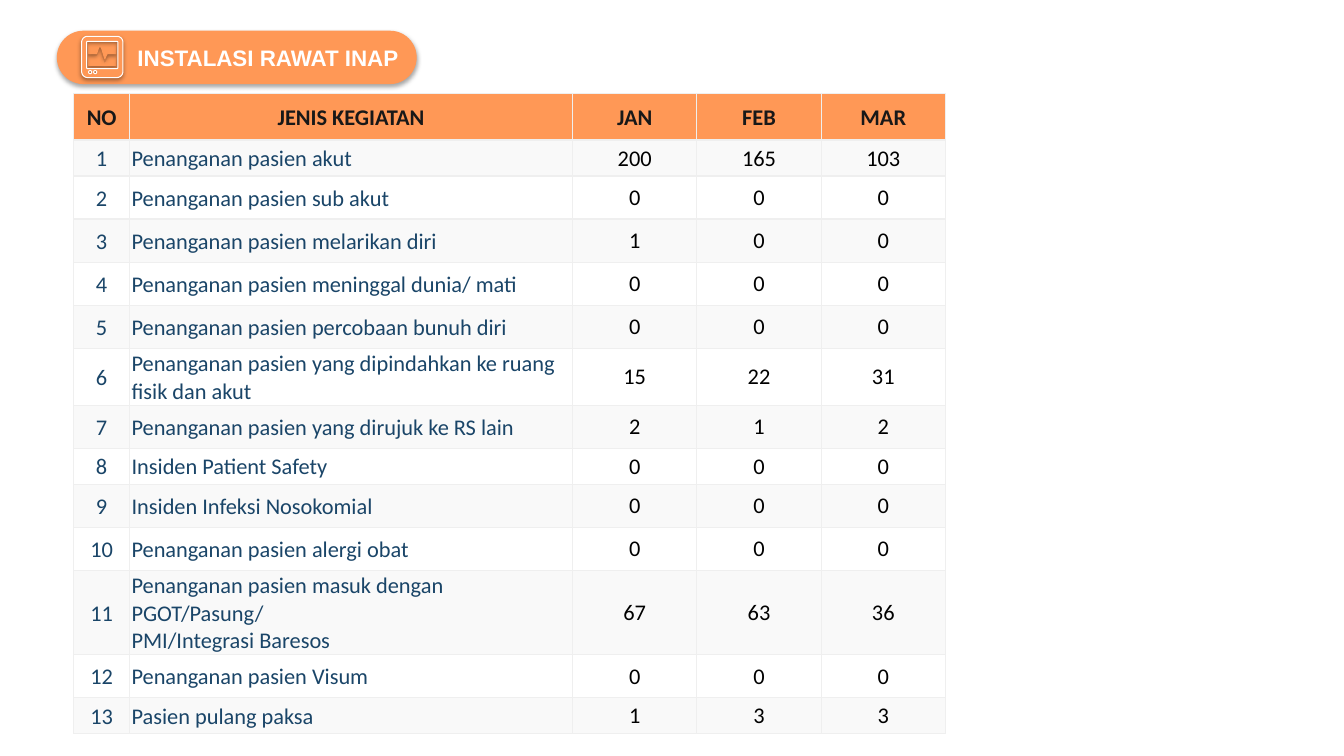
from copy import deepcopy
from dataclasses import dataclass
from math import cos, radians, sin

from lxml.etree import SubElement
from pptx import Presentation
from pptx.dml.color import RGBColor
from pptx.enum.shapes import MSO_SHAPE
from pptx.enum.text import MSO_ANCHOR, PP_ALIGN
from pptx.oxml.ns import qn
from pptx.util import Pt


@dataclass(frozen=True)
class Theme:
    orange: str = "FF9856"
    white: str = "FFFFFF"
    stripe: str = "F9F9F9"
    grid: str = "EFEFEF"
    heading: str = "181818"
    navy: str = "1A4568"
    black: str = "000000"
    text_size: float = 16
    table_font: str = "Calibri"
    title_font: str = "Arial"


@dataclass(frozen=True)
class Activity:
    name: str
    counts: tuple[int, int, int]
    height: float = 30.8


@dataclass(frozen=True)
class Box:
    """A rounded box in points."""
    left: float
    top: float
    width: float
    height: float
    radius: float


THEME = Theme()
SHORT_ROW = 25.7
HEADER_HEIGHT = 33
HEADINGS = ("NO", "JENIS KEGIATAN", "JAN", "FEB", "MAR")
COLUMN_WIDTHS = (40, 316.4, 88.8, 88.8, 88.8)
ACTIVITIES = (
    Activity("Penanganan pasien akut", (200, 165, 103), SHORT_ROW),
    Activity("Penanganan pasien sub akut", (0, 0, 0)),
    Activity("Penanganan pasien melarikan diri", (1, 0, 0)),
    Activity("Penanganan pasien meninggal dunia/ mati", (0, 0, 0)),
    Activity("Penanganan pasien percobaan bunuh diri", (0, 0, 0)),
    Activity("Penanganan pasien yang dipindahkan ke ruang fisik dan akut", (15, 22, 31), 40),
    Activity("Penanganan pasien yang dirujuk ke RS lain", (2, 1, 2)),
    Activity("Insiden Patient Safety", (0, 0, 0), SHORT_ROW),
    Activity("Insiden Infeksi Nosokomial", (0, 0, 0)),
    Activity("Penanganan pasien alergi obat", (0, 0, 0)),
    Activity("Penanganan pasien masuk dengan PGOT/Pasung/\vPMI/Integrasi Baresos", (67, 63, 36), 60),
    Activity("Penanganan pasien Visum", (0, 0, 0)),
    Activity("Pasien pulang paksa", (1, 3, 3), SHORT_ROW),
)

# Heart monitor icon, in points
PILL = Box(41, 22.3, 256.3, 37.4, 18.7)
WAVE_BELOW = [(71.3, 36.7), (69.8, 39.6), (69.1, 40.3), (63.4, 40.3), (63.4, 46.8), (82.8, 46.8),
              (82.8, 40.3), (77.8, 40.3), (75.6, 44.6), (74.9, 45.4), (74.2, 44.6)]
WAVE_ABOVE = [(63.4, 31), (63.4, 38.2), (69.1, 38.2), (70.6, 33.8), (71.3, 33.1), (72.4, 33.8),
              (74.9, 41.8), (76.3, 38.9), (77, 38.2), (82.8, 38.2), (82.8, 31)]
MONITOR = (
    Box(61.9, 29.5, 22.3, 19.5, 0.7),
    Box(63.3, 50.4, 2.2, 2.2, 1.1),
    Box(66.9, 50.4, 2.2, 2.2, 1.1),
    Box(58.3, 25.9, 29.5, 29.5, 4.3),
)


def write(frame, text: str, *, font: str, color: str, bold: bool = False,
          align: PP_ALIGN = PP_ALIGN.CENTER) -> None:
    paragraph = frame.paragraphs[0]
    paragraph.text = text
    paragraph.alignment = align
    for run in paragraph.runs:
        run.font.name = font
        run.font.size = Pt(THEME.text_size)
        run.font.bold = bold
        run.font.color.rgb = RGBColor.from_string(color)
    # Line breaks take the size of the text around them
    for line_break in paragraph._p.findall(qn("a:br")):
        line_break.append(deepcopy(paragraph.runs[0]._r.rPr))


def style_shape(shape, line: str) -> None:
    shape.fill.solid()
    shape.fill.fore_color.rgb = RGBColor.from_string(THEME.orange)
    shape.line.color.rgb = RGBColor.from_string(line)
    shape.line.width = Pt(0.75)
    shape.shadow.inherit = False
    effects = shape._element.spPr.find(qn("a:effectLst"))
    shadow = SubElement(effects, qn("a:outerShdw"), blurRad=str(Pt(3.1)), dist=str(Pt(1.8)),
                        dir="5400000", rotWithShape="0")
    tint = SubElement(shadow, qn("a:srgbClr"), val=THEME.black)
    SubElement(tint, qn("a:alpha"), val="35000")


def rounded_outline(box: Box) -> list[tuple[float, float]]:
    r = box.radius
    right, bottom = box.left + box.width - r, box.top + box.height - r
    corners = ((right, bottom), (box.left + r, bottom), (box.left + r, box.top + r), (right, box.top + r))
    return [(x + r * cos(radians(angle)), y + r * sin(radians(angle)))
            for quarter, (x, y) in enumerate(corners)
            for angle in range(90 * quarter, 90 * quarter + 91, 15)]


def draw_outlines(shapes, outlines: list[list[tuple[float, float]]], line: str) -> None:
    builder = None
    for outline in outlines:
        start, *rest = [(x * 100, y * 100) for x, y in outline]
        if builder is None:
            builder = shapes.build_freeform(*start, scale=Pt(1) / 100)
        else:
            builder.move_to(*start)
        builder.add_line_segments(rest, close=True)
    style_shape(builder.convert_to_shape(), line)


def style_cell(cell, fill: str, inset: float) -> None:
    cell.vertical_anchor = MSO_ANCHOR.MIDDLE
    cell.margin_left = cell.margin_right = cell.margin_top = Pt(inset)
    cell.margin_bottom = 0
    properties = cell._tc.get_or_add_tcPr()
    for side in ("a:lnL", "a:lnR", "a:lnT", "a:lnB"):
        border = SubElement(properties, qn(side), w=str(Pt(1)))
        SubElement(SubElement(border, qn("a:solidFill")), qn("a:srgbClr"), val=THEME.grid)
    cell.fill.solid()
    cell.fill.fore_color.rgb = RGBColor.from_string(fill)


def draw_table(slide) -> None:
    heights = [HEADER_HEIGHT, *(activity.height for activity in ACTIVITIES)]
    table = slide.shapes.add_table(len(heights), len(HEADINGS), Pt(52.6), Pt(67),
                                   Pt(sum(COLUMN_WIDTHS)), Pt(sum(heights))).table
    table.horz_banding = False
    for column, width in zip(table.columns, COLUMN_WIDTHS):
        column.width = Pt(width)
    for row, height in zip(table.rows, heights):
        row.height = Pt(height)

    # Header row
    for cell, heading in zip(table.rows[0].cells, HEADINGS):
        style_cell(cell, THEME.orange, 1.4)
        write(cell.text_frame, heading, font=THEME.table_font, color=THEME.heading, bold=True)

    # Activity rows
    for number, activity in enumerate(ACTIVITIES, start=1):
        fill = THEME.stripe if number % 2 else THEME.white
        values = (number, activity.name, *activity.counts)
        for column, (cell, value) in enumerate(zip(table.rows[number].cells, values)):
            is_count = column > 1
            style_cell(cell, fill, 0.7 if is_count else 1.4)
            write(cell.text_frame, str(value), font=THEME.table_font,
                  color=THEME.black if is_count else THEME.navy,
                  align=PP_ALIGN.LEFT if column == 1 else PP_ALIGN.CENTER)


def draw_title(slide) -> None:
    badge = slide.shapes.add_group_shape().shapes
    pill = badge.add_shape(MSO_SHAPE.ROUNDED_RECTANGLE, Pt(PILL.left), Pt(PILL.top),
                           Pt(PILL.width), Pt(PILL.height))
    pill.adjustments[0] = PILL.radius / PILL.height
    style_shape(pill, THEME.orange)
    pill.text_frame.vertical_anchor = MSO_ANCHOR.MIDDLE
    write(pill.text_frame, "INSTALASI RAWAT INAP", font=THEME.title_font, color=THEME.white,
          bold=True, align=PP_ALIGN.RIGHT)

    # Heart monitor icon
    for wave in (WAVE_BELOW, WAVE_ABOVE):
        draw_outlines(badge, [wave], THEME.orange)
    draw_outlines(badge, [rounded_outline(box) for box in MONITOR], THEME.white)


def main() -> None:
    presentation = Presentation()
    presentation.slide_width, presentation.slide_height = Pt(960), Pt(540)
    slide = presentation.slides.add_slide(presentation.slide_layouts[6])
    draw_table(slide)
    draw_title(slide)
    presentation.save("out.pptx")


if __name__ == "__main__":
    main()
